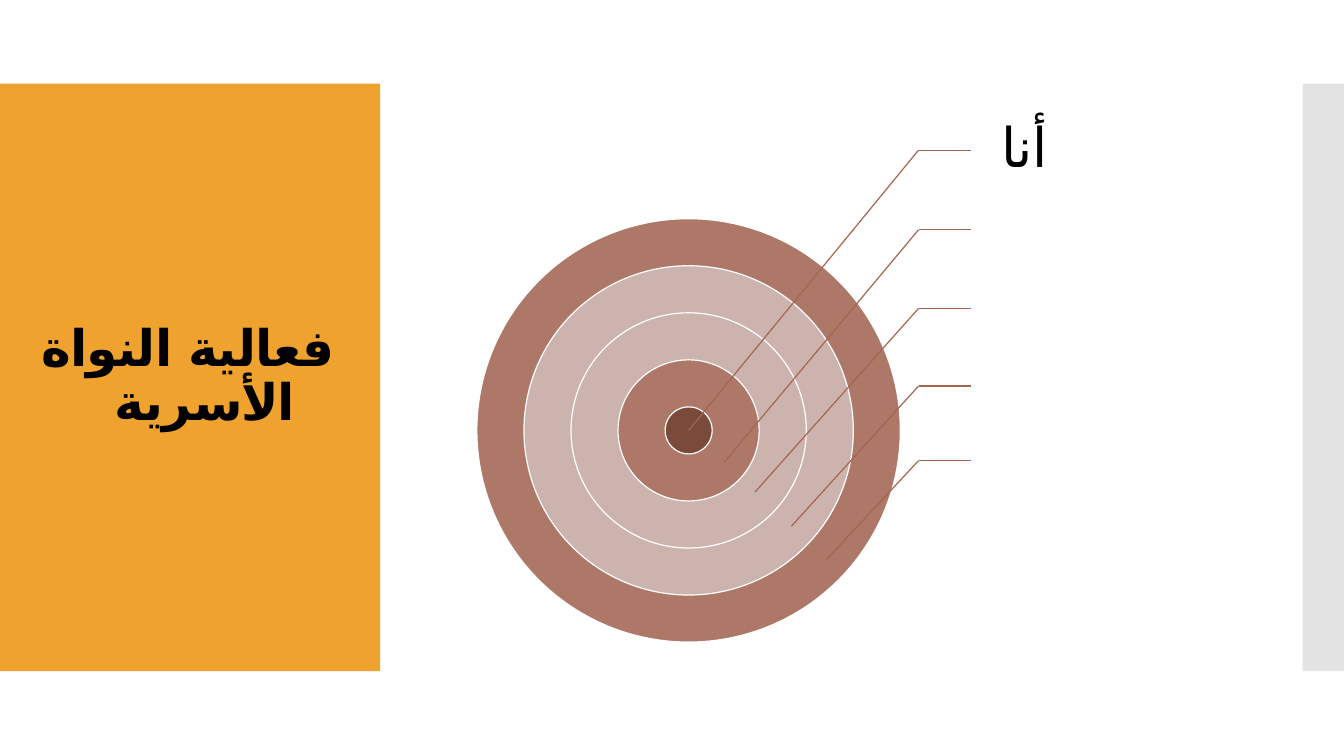
from dataclasses import dataclass

from lxml import etree
from pptx import Presentation
from pptx.dml.color import RGBColor
from pptx.enum.shapes import MSO_CONNECTOR, MSO_SHAPE
from pptx.enum.text import MSO_ANCHOR, PP_ALIGN
from pptx.oxml.ns import qn
from pptx.util import Inches, Pt

RECTANGLE, ELLIPSE = MSO_SHAPE.RECTANGLE, MSO_SHAPE.OVAL
STRAIGHT = MSO_CONNECTOR.STRAIGHT
MIDDLE = MSO_ANCHOR.MIDDLE
LEFT, CENTER = PP_ALIGN.LEFT, PP_ALIGN.CENTER


@dataclass(frozen=True)
class Theme:
    font: str = "Calibri"
    arabic_font: str = "DejaVu Sans"
    title_size: float = 36
    label_size: float = 39
    line_width: float = 0.85
    text: str = "000000"
    title_panel: str = "F0A22E"
    edge_panel: str = "C8C8C8"
    ring_line: str = "FFFFFF"
    leader: str = "A5644E"
    # Outermost ring first
    rings: tuple = ("AE7869", "CCB3AD", "CCB3AD", "AE7869", "7A4A3A")


def write_text(frame, text, *, font, arabic_font, size, color, bold=False,
               align=LEFT, rtl=False, tracking=None):
    """Fill a text frame with one formatted Arabic paragraph."""
    frame.word_wrap = True
    frame.vertical_anchor = MIDDLE
    paragraph = frame.paragraphs[0]
    paragraph.alignment = align
    paragraph.line_spacing = 0.9
    if rtl:
        paragraph._p.get_or_add_pPr().set("rtl", "1")
    run = paragraph.add_run()
    run.text = text
    run.font.name = font
    run.font.size = Pt(size)
    run.font.bold = bold
    run.font.color.rgb = RGBColor.from_string(color)
    properties = run._r.get_or_add_rPr()
    properties.set("lang", "ar-SA")
    etree.SubElement(properties, qn("a:cs")).set("typeface", arabic_font)
    if tracking is not None:
        properties.set("spc", str(round(tracking * 100)))


class SlideBuilder:
    def __init__(self, slide, theme):
        self.slide = slide
        self.theme = theme

    def shape(self, kind, left, top, width, height, fill, line=None, alpha=None):
        shape = self.slide.shapes.add_shape(
            kind, Inches(left), Inches(top), Inches(width), Inches(height))
        shape.shadow.inherit = False
        shape.fill.solid()
        shape.fill.fore_color.rgb = RGBColor.from_string(fill)
        if alpha is not None:
            color = shape._element.spPr.find(qn("a:solidFill"))[0]
            etree.SubElement(color, qn("a:alpha")).set("val", str(alpha * 1000))
        if line:
            shape.line.color.rgb = RGBColor.from_string(line)
            shape.line.width = Pt(self.theme.line_width)
        else:
            shape.line.fill.background()

    def line(self, x1, y1, x2, y2):
        connector = self.slide.shapes.add_connector(
            STRAIGHT, Inches(x1), Inches(y1), Inches(x2), Inches(y2))
        connector.line.color.rgb = RGBColor.from_string(self.theme.leader)
        connector.line.width = Pt(self.theme.line_width)
        etree.SubElement(connector._element.spPr, qn("a:effectLst"))

    def text(self, text, left, top, width, height, inset=0.1, **style):
        box = self.slide.shapes.add_textbox(
            Inches(left), Inches(top), Inches(width), Inches(height))
        box.text_frame.margin_left = Inches(inset)
        write_text(box.text_frame, text, font=self.theme.font,
                   arabic_font=self.theme.arabic_font,
                   color=self.theme.text, **style)


def main():
    presentation = Presentation()
    presentation.slide_width = Inches(13.33)
    presentation.slide_height = Inches(7.5)
    theme = Theme()
    slide = presentation.slides.add_slide(presentation.slide_layouts[6])
    builder = SlideBuilder(slide, theme)

    # Side panels and title
    builder.shape(RECTANGLE, 0, 0.83, 3.77, 5.83, theme.title_panel)
    builder.shape(RECTANGLE, 12.92, 0.83, 0.41, 5.83, theme.edge_panel, alpha=50)
    builder.text(" فعالية النواة الأسرية ", 0.28, 1.23, 3.34, 5.03,
                 size=theme.title_size, bold=True, align=CENTER, rtl=True,
                 tracking=-0.6)

    # Concentric rings, each two core radii narrower than the last
    center_x, center_y, outer = 6.83, 4.27, 4.2
    for index, color in enumerate(theme.rings):
        diameter = outer * (9 - 2 * index) / 9
        builder.shape(ELLIPSE, center_x - diameter / 2, center_y - diameter / 2,
                      diameter, diameter, color, line=theme.ring_line)

    # Label of the core
    builder.text("أنا", 9.63, 1.12, 2.1, 0.74, inset=0.3, size=theme.label_size)

    # Leader lines: label height, then the point reached in the ring
    elbow_x, label_x = 9.11, 9.63
    leaders = [(1.49, center_x, center_y), (2.28, 7.18, 4.59),
               (3.06, 7.49, 4.88), (3.83, 7.85, 5.22), (4.57, 8.2, 5.55)]
    for label_y, ring_x, ring_y in leaders:
        builder.line(elbow_x, label_y, label_x, label_y)
        builder.line(elbow_x, label_y, ring_x, ring_y)

    presentation.save("out.pptx")


if __name__ == "__main__":
    main()
